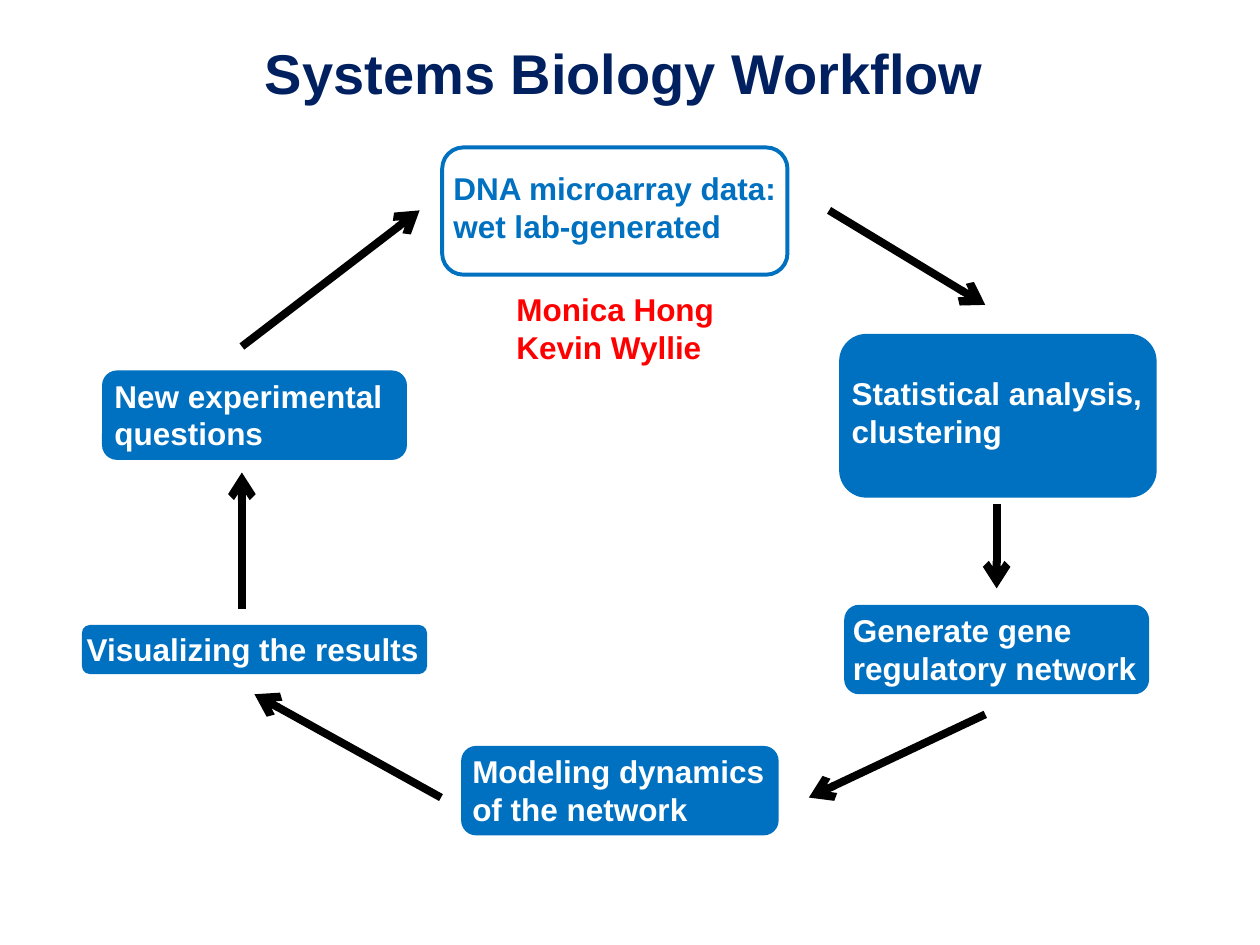
import pptx
import pptx.dml.color
import pptx.enum.shapes
import pptx.enum.text
import pptx.oxml
import pptx.oxml.ns
import pptx.util

Inches = pptx.util.Inches
Pt = pptx.util.Pt

FONT = "Arial"
COLORS = {
    "title": "002060",
    "box": "0070C0",
    "box_text": "FFFFFF",
    "names": "FF0000",
    "arrow": "000000",
}

# Filled steps: box position, label position, label lines, whether the label wraps
STEPS = [
    ((6.66, 2.65, 2.52, 1.3), (6.66, 2.92, 2.52, 0.71),
     ["Statistical analysis,", "clustering"], True),
    ((6.7, 4.8, 2.42, 0.71), (6.67, 4.8, 2.58, 0.71),
     ["Generate gene regulatory network"], True),
    ((3.66, 5.92, 2.52, 0.71), (3.65, 5.92, 2.53, 0.71),
     ["Modeling dynamics of the network"], True),
    ((0.65, 4.96, 2.74, 0.39), (0.59, 4.95, 2.86, 0.4),
     ["Visualizing the results"], False),
    ((0.81, 2.94, 2.42, 0.71), (0.81, 2.94, 2.42, 0.71),
     ["New experimental questions"], True),
]

# Arrows clockwise from the top box: start, end
ARROWS = [
    ((6.58, 1.67), (7.82, 2.42)),
    ((7.91, 4), (7.91, 4.67)),
    ((7.82, 5.67), (6.42, 6.33)),
    ((3.5, 6.33), (2.02, 5.51)),
    ((1.92, 4.83), (1.92, 3.75)),
    ((1.92, 2.75), (3.33, 1.67)),
]


def rgb(name):
    return pptx.dml.color.RGBColor.from_string(COLORS[name])


def inches(values):
    return [Inches(value) for value in values]


def add_run(paragraph, text, size, color):
    run = paragraph.add_run()
    run.text = text
    run.font.name = FONT
    run.font.size = Pt(size)
    run.font.bold = True
    run.font.color.rgb = rgb(color)


def set_title(slide, text):
    title = slide.shapes.title
    title.left, title.top, title.width, title.height = inches((1.08, 0.25, 7.75, 0.64))
    title.text_frame.vertical_anchor = pptx.enum.text.MSO_ANCHOR.MIDDLE
    paragraph = title.text_frame.paragraphs[0]
    paragraph.alignment = pptx.enum.text.PP_ALIGN.CENTER
    add_run(paragraph, text, 32, "title")


def add_label(slide, position, lines, color, wrap=True):
    frame = slide.shapes.add_textbox(*inches(position)).text_frame
    frame.word_wrap = wrap
    for index, line in enumerate(lines):
        paragraph = frame.add_paragraph() if index else frame.paragraphs[0]
        add_run(paragraph, line, 18, color)


def add_box(slide, position, filled=True):
    shape = slide.shapes.add_shape(
        pptx.enum.shapes.MSO_SHAPE.ROUNDED_RECTANGLE, *inches(position))
    shape.shadow.inherit = False
    if filled:
        shape.fill.solid()
        shape.fill.fore_color.rgb = rgb("box")
        shape.line.fill.background()
    else:
        shape.fill.background()
        shape.line.color.rgb = rgb("box")
        shape.line.width = Pt(2.25)


def add_arrow(slide, start, end):
    connector = slide.shapes.add_connector(
        pptx.enum.shapes.MSO_CONNECTOR.STRAIGHT, *inches(start + end))
    connector.line.color.rgb = rgb("arrow")
    connector.line.width = Pt(4.5)
    head = pptx.oxml.parse_xml(
        f'<a:tailEnd {pptx.oxml.ns.nsdecls("a")} type="arrow"/>')
    connector.line._get_or_add_ln().append(head)
    no_effects = pptx.oxml.parse_xml(f'<a:effectLst {pptx.oxml.ns.nsdecls("a")}/>')
    connector._element.spPr.append(no_effects)


def main():
    presentation = pptx.Presentation()
    presentation.slide_width = Inches(10)
    presentation.slide_height = Inches(7.5)
    slide = presentation.slides.add_slide(presentation.slide_layouts[5])

    set_title(slide, "Systems Biology Workflow")

    # Starting point of the cycle, with the people responsible
    add_box(slide, (3.51, 1.17, 2.74, 1.01), filled=False)
    add_label(slide, (3.5, 1.29, 2.83, 0.71),
              ["DNA microarray data:", "wet lab-generated"], "box")
    add_label(slide, (4, 2.25, 1.79, 0.71),
              ["Monica Hong", "Kevin Wyllie"], "names", wrap=False)

    # Remaining steps
    for box, label, lines, wrap in STEPS:
        add_box(slide, box)
        add_label(slide, label, lines, "box_text", wrap)

    # Cycle arrows
    for start, end in ARROWS:
        add_arrow(slide, start, end)

    presentation.save("out.pptx")


if __name__ == "__main__":
    main()
